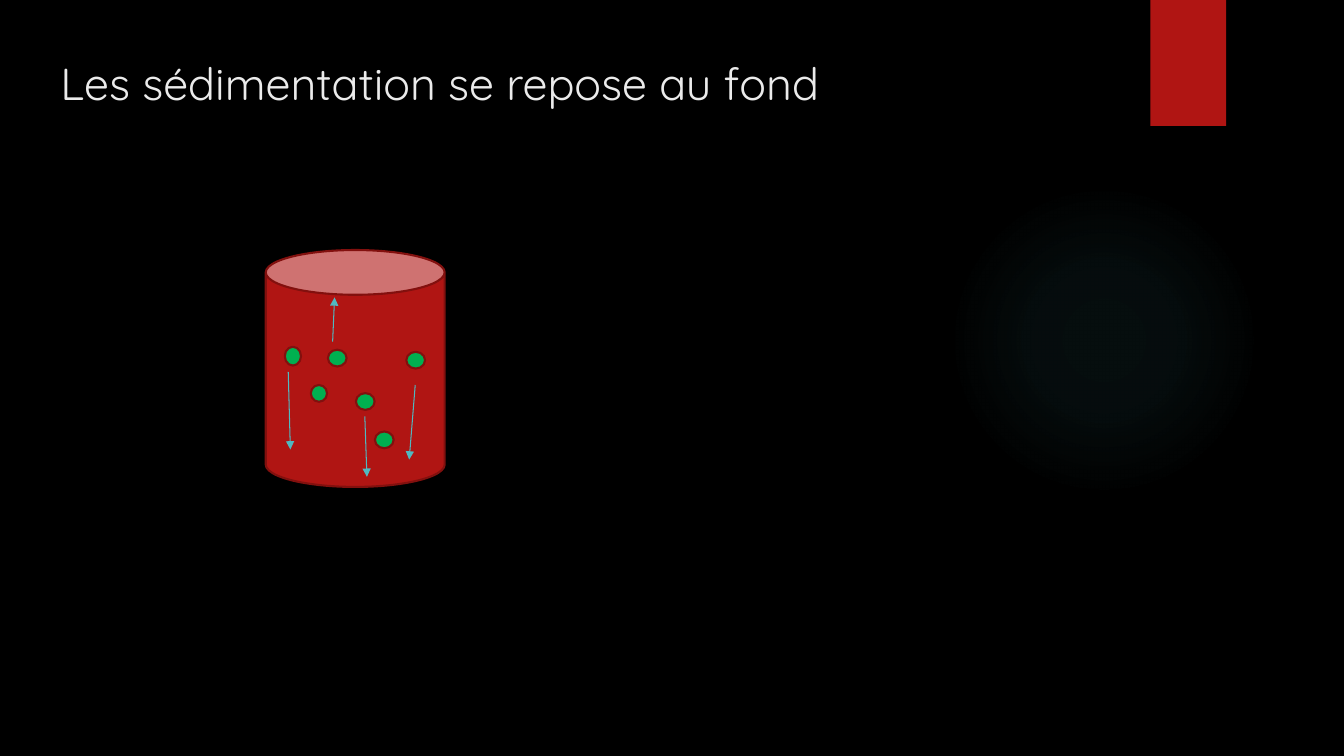
"""Build the slide showing sediment settling in a cylinder."""
from lxml import etree
from pptx import Presentation
from pptx.dml.color import RGBColor
from pptx.enum.shapes import MSO_CONNECTOR as CONN, MSO_SHAPE as SHAPE
from pptx.enum.text import MSO_ANCHOR
from pptx.oxml import parse_xml
from pptx.oxml.ns import nsdecls, qn
from pptx.util import Pt

BLACK = RGBColor(0x00, 0x00, 0x00)
RED = RGBColor(0xB0, 0x15, 0x13)
DARK_RED = RGBColor(0x82, 0x10, 0x0E)
GREEN = RGBColor(0x00, 0xB0, 0x50)
TEAL = RGBColor(0x50, 0xB9, 0xC1)
OFF_WHITE = RGBColor(0xEB, 0xEB, 0xEB)

prs = Presentation()
prs.slide_width, prs.slide_height = Pt(960), Pt(540)
s = prs.slides.add_slide(prs.slide_layouts[6])
s.background.fill.solid()
s.background.fill.fore_color.rgb = BLACK


def add_shape(kind, x, y, w, h, fill=None, line=None):
    sp = s.shapes.add_shape(kind, Pt(x), Pt(y), Pt(w), Pt(h))
    sp.shadow.inherit = False
    if fill is None:
        sp.fill.background()
    else:
        sp.fill.solid()
        sp.fill.fore_color.rgb = fill
    if line is None:
        sp.line.fill.background()
    else:
        sp.line.color.rgb = line
        sp.line.width = Pt(1.5)
    return sp


def add_text(text, x, y, w, h, size=32, font="Quicksand", color=OFF_WHITE):
    tf = s.shapes.add_textbox(Pt(x), Pt(y), Pt(w), Pt(h)).text_frame
    tf.word_wrap = True
    tf.vertical_anchor = MSO_ANCHOR.TOP
    r = tf.paragraphs[0].add_run()
    r.text = text
    r.font.size = Pt(size)
    r.font.name = font
    r.font.color.rgb = color


glow = add_shape(SHAPE.OVAL, 677.5, 131.8, 221.8, 221.8)
stops = "".join(
    f'<a:gs pos="{pos}000"><a:srgbClr val="{TEAL}"><a:alpha val="{alpha}000"/></a:srgbClr></a:gs>'
    for pos, alpha in [(0, 7), (36, 6), (69, 0)])
grad = parse_xml(
    f'<a:gradFill {nsdecls("a")} rotWithShape="1"><a:gsLst>{stops}</a:gsLst><a:path path="circle">'
    '<a:fillToRect l="50000" t="50000" r="50000" b="50000"/></a:path></a:gradFill>')
spPr = glow.element.spPr
spPr.replace(spPr.find(qn("a:noFill")), grad)

add_shape(SHAPE.RECTANGLE, 821.8, 0, 54, 90, RED)
add_text("Les sédimentation se repose au fond", 36, 36, 755.3, 92.9)

add_shape(SHAPE.CAN, 189.8, 178.6, 127.8, 169.2, RED, DARK_RED)

particles = [
    (203.4, 247.7, 11.6, 13.4), (222, 275, 11.6, 12), (234.2, 249.8, 13.4, 12),
    (254.2, 280.8, 13.4, 12), (267.8, 308.2, 13.4, 12), (290.2, 251.3, 13.4, 12),
]
for x, y, w, h in particles:
    add_shape(SHAPE.OVAL, x, y, w, h, GREEN, DARK_RED)

arrows = [
    (296.6, 275, 292.3, 328.3), (260.6, 297.4, 262.1, 340.6),
    (237.6, 244.1, 239, 212.4), (205.9, 265.7, 207.4, 321.1),
]
for ends in arrows:
    arrow = s.shapes.add_connector(CONN.STRAIGHT, *map(Pt, ends))
    arrow.line.color.rgb = TEAL
    arrow.line.width = Pt(0.75)
    etree.SubElement(arrow.line._get_or_add_ln(), qn("a:tailEnd"), type="triangle")
    etree.SubElement(arrow._element.spPr, qn("a:effectLst"))

prs.save("out.pptx")
